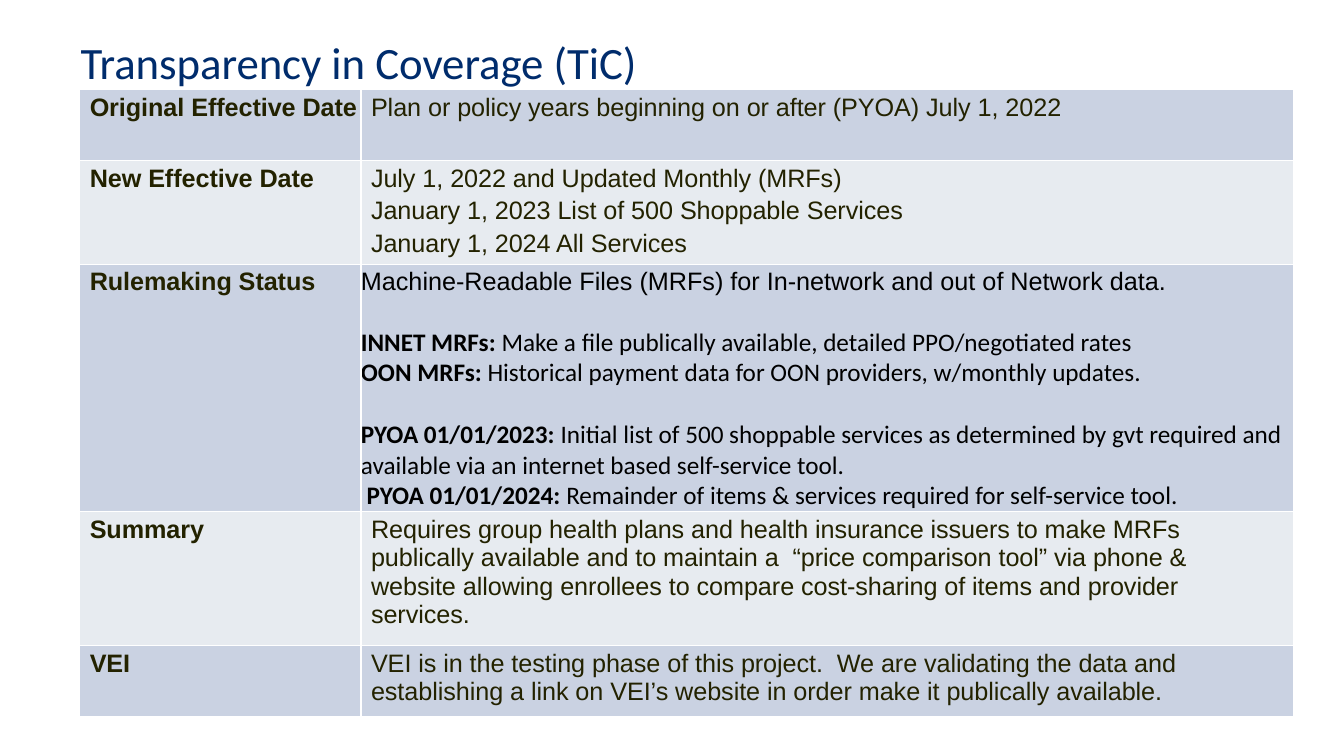
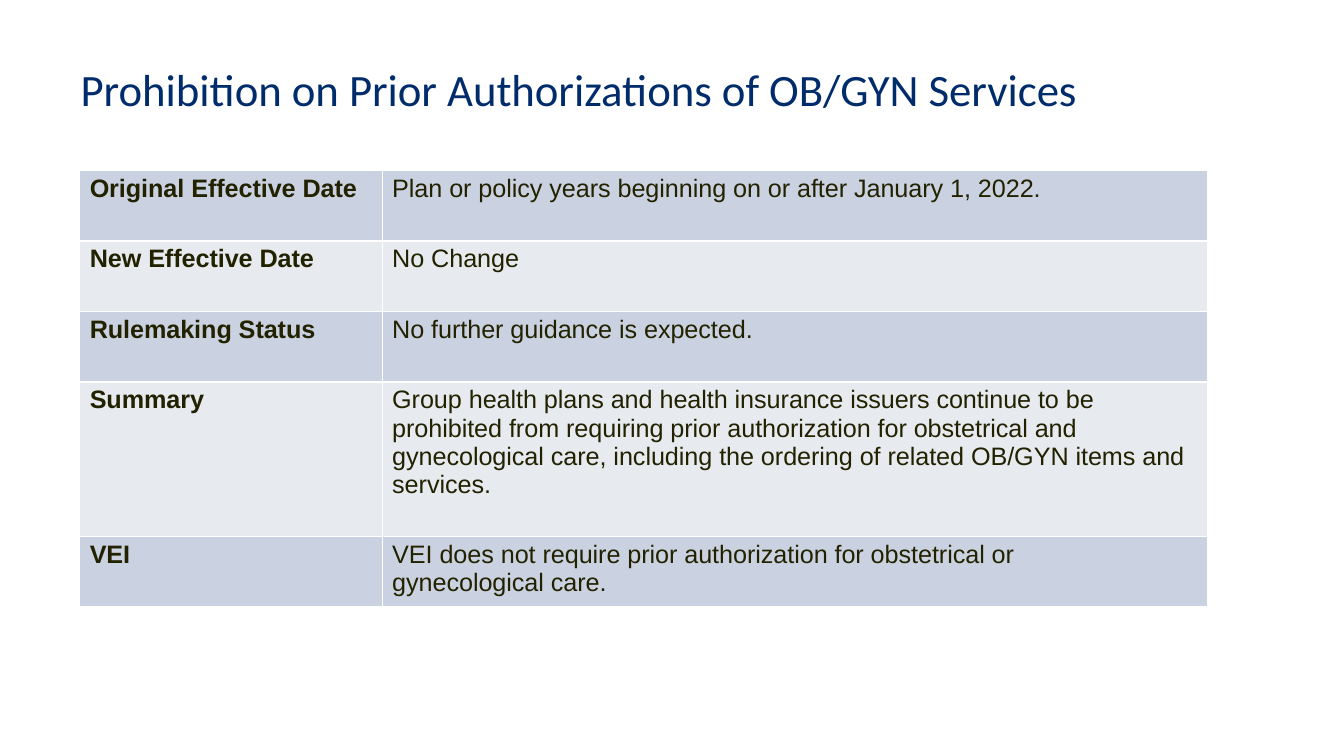
from lxml.etree import SubElement
from pptx import Presentation
from pptx.dml.color import RGBColor
from pptx.enum.text import MSO_ANCHOR, PP_ALIGN
from pptx.oxml.ns import qn
from pptx.util import Pt

PX = 9144
NAVY = RGBColor(0x00, 0x2C, 0x6C)
INK = RGBColor(0x23, 0x22, 0x00)
BLACK = RGBColor(0, 0, 0)
BLUE = RGBColor(0xCA, 0xD2, 0xE2)
GREY = RGBColor(0xE7, 0xEB, 0xF0)
LEFT = 79
PAD = 10
LABELS = ["Original Effective Date", "New Effective Date",
          "Rulemaking Status", "Summary", "VEI"]

RULES = [
    ("", "Machine-Readable Files (MRFs) for In-network and out of Network data.", "Arial", 0),
    ("INNET MRFs: ", "Make a file publically available, detailed PPO/negotiated rates", "Calibri", 22),
    ("OON MRFs: ", "Historical payment data for OON providers, w/monthly updates.", "Calibri", 0),
    ("PYOA 01/01/2023:", " Initial list of 500 shoppable services as determined by gvt "
     "required and available via an internet based self-service tool.", "Calibri", 22),
    (" PYOA 01/01/2024: ", "Remainder of items & services required for self-service tool.",
     "Calibri", 0),
]

SLIDES = [
    {
        "title": "Transparency in Coverage (TiC)",
        "box": (33, 687), "top": 89, "cols": (279, 925),
        "rows": (70, 103, 244, 133, 70), "right": (0, 0, 0, 50, 50),
        "text": [
            ["Plan or policy years beginning on or after (PYOA) July 1, 2022"],
            ["July 1, 2022 and Updated Monthly (MRFs)",
             "January 1, 2023 List of 500 Shoppable Services",
             "January 1, 2024 All Services"],
            RULES,
            ["Requires group health plans and health insurance issuers to make MRFs "
             "publically available and to maintain a  “price comparison tool” via phone & "
             "website allowing enrollees to compare cost-sharing of items and provider "
             "services."],
            ["VEI is in the testing phase of this project.  We are validating the data and "
             "establishing a link on VEI’s website in order make it publically available."],
        ],
    },
    {
        "title": "Prohibition on Prior Authorizations of OB/GYN Services",
        "box": (60, 1096), "top": 169, "cols": (300, 819),
        "rows": (70, 70, 70, 153, 70), "right": (0, 0, 0, 10, 50),
        "text": [
            ["Plan or policy years beginning on or after January 1, 2022."],
            ["No Change"],
            ["No further guidance is expected."],
            ["Group health plans and health insurance issuers continue to be prohibited from "
             "requiring prior authorization for obstetrical and gynecological care, including "
             "the ordering of related OB/GYN items and services."],
            ["VEI does not require prior authorization for obstetrical or gynecological care."],
        ],
    },
]


def style(run, face, size, color, bold=False, tight=True):
    font = run.font
    font.name, font.size, font.bold = face, Pt(size), bold
    font.color.rgb = color
    if tight:
        run._r.get_or_add_rPr().set("spc", "-5")


def add_title(slide, text, top, width):
    title = slide.shapes.title
    title.left, title.top = LEFT * PX, top * PX
    title.width, title.height = width * PX, 55 * PX
    frame = title.text_frame
    frame.text = text
    frame.word_wrap = True
    frame.vertical_anchor = MSO_ANCHOR.MIDDLE
    frame.margin_left, frame.margin_top = PX, PX
    frame.margin_right = frame.margin_bottom = 0
    para = frame.paragraphs[0]
    para.alignment = PP_ALIGN.LEFT
    para.space_before = Pt(1.1)
    style(para.runs[0], "Calibri", 32, NAVY)


def add_edges(cell):
    props = cell._tc.get_or_add_tcPr()
    for side in ("lnL", "lnR", "lnT", "lnB"):
        line = SubElement(props, qn("a:" + side), w=str(Pt(1)))
        fill = SubElement(line, qn("a:solidFill"))
        SubElement(fill, qn("a:srgbClr"), val="FFFFFF")


def fill_cell(cell, items, color, right=0, bold=False):
    add_edges(cell)
    cell.fill.solid()
    cell.fill.fore_color.rgb = color
    rules = items is RULES
    cell.margin_left = 0 if rules else PAD * PX
    cell.margin_right, cell.margin_top, cell.margin_bottom = right * PX, 4 * PX, 0
    frame = cell.text_frame
    for i, item in enumerate(items):
        para = frame.add_paragraph() if i else frame.paragraphs[0]
        if rules:
            head, body, face, gap = item
            para.space_before = Pt(gap)
            for text, heavy in ((head, True), (body, False)):
                if text:
                    run = para.add_run()
                    run.text = text
                    style(run, face, 18, BLACK, heavy, False)
        else:
            para.text = item
            para.space_before = Pt(3.1)
            style(para.runs[0], "Arial", 18, INK, bold)


def add_grid(slide, data):
    cols, rows = data["cols"], data["rows"]
    table = slide.shapes.add_table(
        len(rows), len(cols), LEFT * PX, data["top"] * PX,
        sum(cols) * PX, sum(rows) * PX).table
    table.first_row = table.horz_banding = False
    for col, width in zip(table.columns, cols):
        col.width = width * PX
    for i, (label, items) in enumerate(zip(LABELS, data["text"])):
        table.rows[i].height = rows[i] * PX
        color = GREY if i % 2 else BLUE
        fill_cell(table.cell(i, 0), [label], color, bold=True)
        fill_cell(table.cell(i, 1), items, color, data["right"][i])


def main():
    deck = Presentation()
    deck.slide_width, deck.slide_height = 1333 * PX, 750 * PX
    for data in SLIDES:
        slide = deck.slides.add_slide(deck.slide_layouts[5])
        add_title(slide, data["title"], *data["box"])
        add_grid(slide, data)
    deck.save("out.pptx")


if __name__ == "__main__":
    main()
